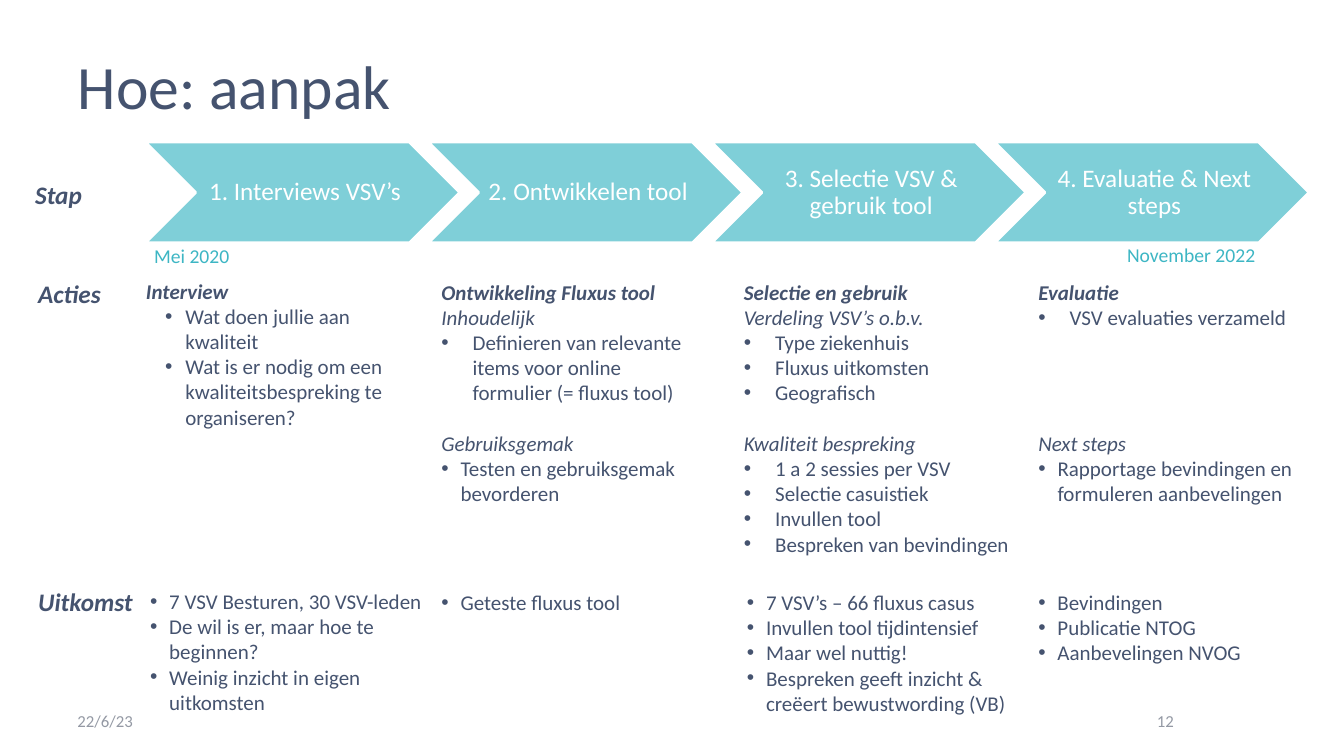
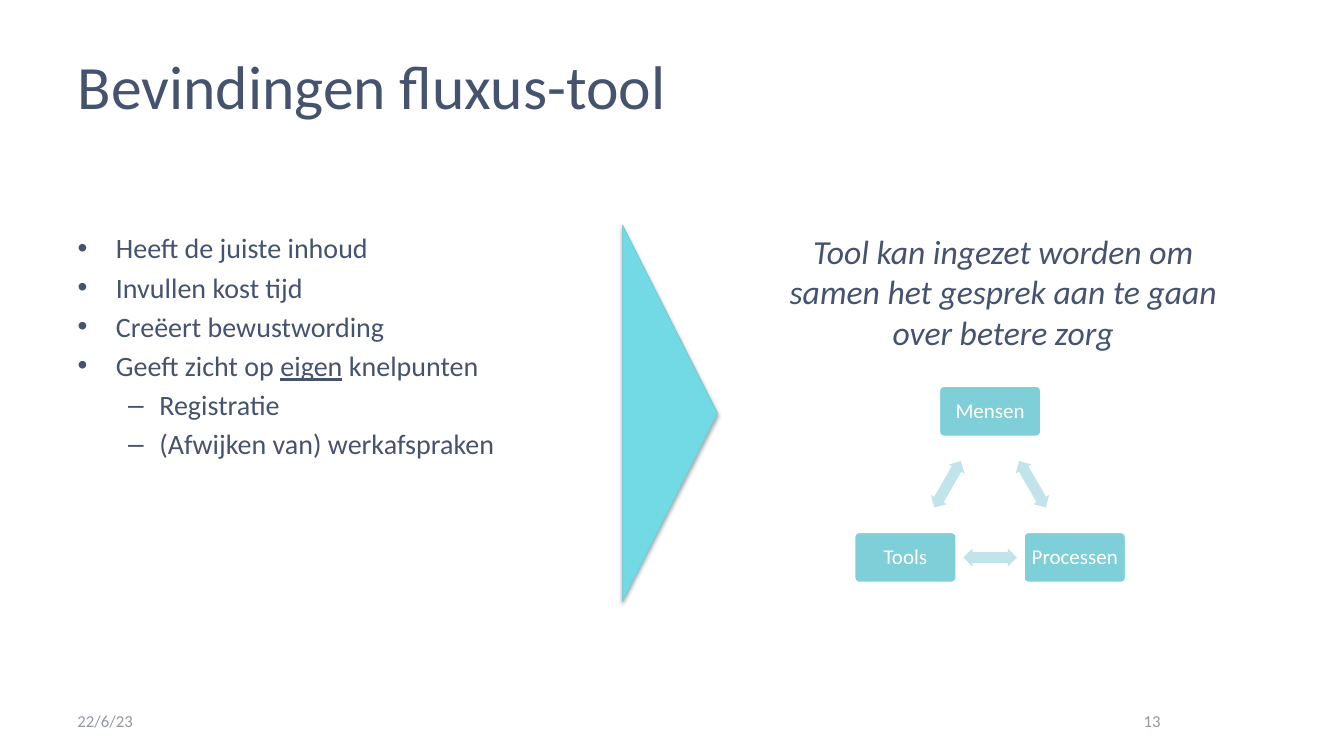
from dataclasses import dataclass
from typing import Optional, Sequence

from lxml import etree
from pptx import Presentation
from pptx import util as u
from pptx.dml import color
from pptx.enum import shapes, text
from pptx.oxml import ns

FONT = "Calibri"
NAVY = "45536F"
GREY = "9499A4"
TEAL = "7FCFD8"
PALE_TEAL = "C0E4E9"
BRIGHT_TEAL = "72DAE5"
EDGE_TEAL = "7ACCD5"
DATE_TEAL = "3DB6C4"
WHITE = "FFFFFF"
LINE_PT = 18


@dataclass(frozen=True)
class Bullet:
    margin: float
    hanging: float
    char: str = "•"
    level: int = 0


@dataclass(frozen=True)
class Run:
    words: str
    bold: bool = False
    italic: bool = False
    underline: bool = False


@dataclass(frozen=True)
class Line:
    runs: tuple[Run, ...]
    bullet: Optional[Bullet] = None
    before: float = 0


@dataclass(frozen=True)
class Block:
    left: float
    top: float
    width: float
    height: float
    lines: tuple[Line, ...]
    size: float = 15
    ink: str = NAVY
    align: text.PP_ALIGN = text.PP_ALIGN.LEFT
    anchor: text.MSO_ANCHOR = text.MSO_ANCHOR.TOP


@dataclass(frozen=True)
class Node:
    label: str
    x: float
    y: float


WIDE = Bullet(0.31, 0.31)
NARROW = Bullet(0.19, 0.19)
NESTED = Bullet(0.39, 0.2, level=1)
FINDING = Bullet(0.38, 0.38)
DETAIL = Bullet(0.81, 0.31, "–", 1)


def plain(words: str) -> Line:
    return Line((Run(words),))


def heading(words: str) -> Line:
    return Line((Run(words, bold=True, italic=True),))


def subheading(words: str, skipped: int = 0) -> Line:
    return Line((Run(words, italic=True),), before=skipped * LINE_PT)


def bullets(style: Bullet, *items: str, before: float = 0) -> tuple[Line, ...]:
    return tuple(Line((Run(item),), style, before) for item in items)


def rgb(value: str) -> color.RGBColor:
    return color.RGBColor.from_string(value)


def add_bullet(paragraph, bullet: Bullet) -> None:
    paragraph.level = bullet.level
    props = paragraph._p.get_or_add_pPr()
    props.set("marL", str(u.Inches(bullet.margin)))
    props.set("indent", str(-u.Inches(bullet.hanging)))
    etree.SubElement(props, ns.qn("a:buFont")).set("typeface", "Arial")
    etree.SubElement(props, ns.qn("a:buChar")).set("char", bullet.char)


def write(frame, lines: Sequence[Line], size: float, ink: str,
          align: text.PP_ALIGN = text.PP_ALIGN.LEFT,
          spacing: Optional[float] = None) -> None:
    frame.word_wrap = True
    for index, line in enumerate(lines):
        paragraph = frame.paragraphs[0] if index == 0 else frame.add_paragraph()
        if line.bullet:
            add_bullet(paragraph, line.bullet)
        paragraph.alignment = align
        paragraph.space_before = u.Pt(line.before if index else 0)
        if spacing:
            paragraph.line_spacing = spacing
        for part in line.runs:
            run = paragraph.add_run()
            run.text = part.words
            run.font.name = FONT
            run.font.size = u.Pt(size)
            run.font.color.rgb = rgb(ink)
            run.font.bold = part.bold
            run.font.italic = part.italic
            run.font.underline = part.underline


def place(shape, left: float, top: float, width: float, height: float) -> None:
    shape.left, shape.top = u.Inches(left), u.Inches(top)
    shape.width, shape.height = u.Inches(width), u.Inches(height)


def add_block(slide, block: Block) -> None:
    box = slide.shapes.add_textbox(u.Inches(block.left), u.Inches(block.top),
                                   u.Inches(block.width), u.Inches(block.height))
    box.text_frame.vertical_anchor = block.anchor
    write(box.text_frame, block.lines, block.size, block.ink, block.align)


def add_figure(slide, preset: shapes.MSO_SHAPE, left: float, top: float,
               width: float, height: float, fill: str,
               edge: Optional[str] = None, edge_pt: float = 2,
               turn: float = 0):
    figure = slide.shapes.add_shape(preset, u.Inches(left), u.Inches(top),
                                    u.Inches(width), u.Inches(height))
    figure.shadow.inherit = False
    figure.rotation = turn
    figure.fill.solid()
    figure.fill.fore_color.rgb = rgb(fill)
    if edge:
        figure.line.color.rgb = rgb(edge)
        figure.line.width = u.Pt(edge_pt)
    else:
        figure.line.fill.background()
    return figure


def add_label(figure, words: str, size: float, left: float, other: float) -> None:
    frame = figure.text_frame
    frame.margin_left = u.Inches(left)
    frame.margin_right = frame.margin_top = frame.margin_bottom = u.Inches(other)
    frame.vertical_anchor = text.MSO_ANCHOR.MIDDLE
    write(frame, [plain(words)], size, WHITE, text.PP_ALIGN.CENTER, 0.9)


def add_soft_shadow(figure) -> None:
    effects = figure._element.spPr.find(ns.qn("a:effectLst"))
    shadow = etree.SubElement(effects, ns.qn("a:outerShdw"), blurRad=str(u.Pt(3.1)),
                              dist=str(u.Pt(1.8)), dir="5400000", rotWithShape="0")
    tint = etree.SubElement(shadow, ns.qn("a:srgbClr"), val="000000")
    etree.SubElement(tint, ns.qn("a:alpha"), val="35000")


def start_slide(prs, layout: int, title: str, number: str, number_left: float):
    slide = prs.slides.add_slide(prs.slide_layouts[layout])
    place(slide.shapes.title, 0.67, 0.43, 12, 1.12)
    frame = slide.shapes.title.text_frame
    frame.auto_size = text.MSO_AUTO_SIZE.NONE
    frame.vertical_anchor = text.MSO_ANCHOR.TOP
    write(frame, [plain(title)], 44, NAVY)
    middle = text.MSO_ANCHOR.MIDDLE
    add_block(slide, Block(0.67, 6.95, 3.11, 0.4, (plain("22/6/23"),), 12, GREY,
                           anchor=middle))
    add_block(slide, Block(number_left, 6.95, 2.05, 0.4, (plain(number),), 12, GREY,
                           text.PP_ALIGN.RIGHT, middle))
    return slide


STEPS = ("1. Interviews VSV’s", "2. Ontwikkelen tool",
         "3. Selectie VSV & gebruik tool", "4. Evaluatie & Next steps")

APPROACH = (
    Block(0.25, 1.73, 0.8, 0.41, (heading("Stap"),), 18),
    Block(0.28, 2.71, 1.56, 0.4, (heading("Acties"),), 18),
    Block(0.28, 5.77, 1.56, 0.4, (heading("Uitkomst"),), 18),
    Block(1.43, 2.37, 2.66, 0.34, (plain("Mei 2020"),), 14, DATE_TEAL),
    Block(11.08, 2.36, 2.1, 0.34, (plain("November 2022"),), 14, DATE_TEAL),
    Block(1.35, 2.71, 2.64, 1.62, (
        heading("Interview"),
        *bullets(NESTED, "Wat doen jullie aan kwaliteit",
                 "Wat is er nodig om een kwaliteitsbespreking te organiseren?"))),
    Block(4.28, 2.72, 2.64, 2.37, (
        heading("Ontwikkeling Fluxus tool"),
        subheading("Inhoudelijk"),
        *bullets(WIDE, "Definieren van relevante items voor online formulier (= fluxus tool)"),
        subheading("Gebruiksgemak", 1),
        *bullets(NARROW, "Testen en gebruiksgemak bevorderen"))),
    Block(7.28, 2.72, 2.87, 2.88, (
        heading("Selectie en gebruik"),
        subheading("Verdeling VSV’s o.b.v."),
        *bullets(WIDE, "Type ziekenhuis", "Fluxus uitkomsten", "Geografisch"),
        subheading("Kwaliteit bespreking", 1),
        *bullets(WIDE, "1 a 2 sessies per VSV", "Selectie casuistiek",
                 "Invullen tool", "Bespreken van bevindingen"))),
    Block(10.2, 2.72, 2.91, 2.63, (
        heading("Evaluatie"),
        *bullets(WIDE, "VSV evaluaties verzameld"),
        subheading("Next steps", 4),
        *bullets(NARROW, "Rapportage bevindingen en formuleren aanbevelingen"))),
    Block(1.39, 5.79, 2.93, 1.36, bullets(
        NARROW, "7 VSV Besturen, 30 VSV-leden", "De wil is er, maar hoe te beginnen?",
        "Weinig inzicht in eigen uitkomsten")),
    Block(4.28, 5.8, 2.64, 0.61, bullets(NARROW, "Geteste fluxus tool")),
    Block(7.31, 5.8, 2.83, 1.36, bullets(
        NARROW, "7 VSV’s – 66 fluxus casus", "Invullen tool tijdintensief",
        "Maar wel nuttig!", "Bespreken geeft inzicht & creëert bewustwording (VB)")),
    Block(10.2, 5.8, 2.64, 0.86, bullets(
        NARROW, "Bevindingen", "Publicatie NTOG", "Aanbevelingen NVOG")),
)

FINDINGS = (
    *bullets(FINDING, "Heeft de juiste inhoud", "Invullen kost tijd",
             "Creëert bewustwording", before=4),
    Line((Run("Geeft zicht op "), Run("eigen", underline=True), Run(" knelpunten")),
         FINDING, 4),
    *bullets(DETAIL, "Registratie", "(Afwijken van) werkafspraken", before=4),
)

CONCLUSION = Block(
    7.51, 2.24, 4.88, 1.31,
    (subheading("Tool kan ingezet worden om samen het gesprek aan te gaan over betere zorg"),),
    24, align=text.PP_ALIGN.CENTER)

CYCLE = (Node("Mensen", 9.82, 4.08), Node("Processen", 10.66, 5.53),
         Node("Tools", 8.98, 5.53))


def build_approach(prs) -> None:
    slide = start_slide(prs, 5, "Hoe: aanpak", "12", 9.69)
    step_width = 3.12
    for index, step in enumerate(STEPS):
        chevron = add_figure(slide, shapes.MSO_SHAPE.CHEVRON,
                             1.44 + index * step_width * 0.9, 1.41, step_width, 1,
                             TEAL, WHITE)
        add_label(chevron, step, 18, 0.08, 0.03)
    for block in APPROACH:
        add_block(slide, block)


def build_findings(prs) -> None:
    slide = start_slide(prs, 1, "Bevindingen fluxus-tool", "13", 9.56)
    body = slide.placeholders[1]
    place(body, 0.67, 2.24, 4.62, 3.73)
    body.text_frame.auto_size = text.MSO_AUTO_SIZE.NONE
    write(body.text_frame, FINDINGS, 20, NAVY)

    pointer = add_figure(slide, shapes.MSO_SHAPE.ISOSCELES_TRIANGLE, 4.78, 3.63,
                         3.73, 0.94, BRIGHT_TEAL, EDGE_TEAL, 0.75, 90)
    add_soft_shadow(pointer)
    add_block(slide, CONCLUSION)

    node_w, node_h, link_w, link_h = 1.02, 0.51, 0.53, 0.18
    for index, node in enumerate(CYCLE):
        card = add_figure(slide, shapes.MSO_SHAPE.ROUNDED_RECTANGLE,
                          node.x - node_w / 2, node.y - node_h / 2, node_w, node_h,
                          TEAL, WHITE)
        card.adjustments[0] = 0.1
        add_label(card, node.label, 15, 0.03, 0.03)
        following = CYCLE[(index + 1) % len(CYCLE)]
        link = add_figure(slide, shapes.MSO_SHAPE.LEFT_RIGHT_ARROW,
                          (node.x + following.x - link_w) / 2,
                          (node.y + following.y - link_h) / 2,
                          link_w, link_h, PALE_TEAL, turn=60 + 120 * index)
        link.adjustments[0] = 0.6
        link.adjustments[1] = 0.5


def main() -> None:
    prs = Presentation()
    prs.slide_width, prs.slide_height = u.Inches(13.33), u.Inches(7.5)
    build_approach(prs)
    build_findings(prs)
    prs.save("out.pptx")


if __name__ == "__main__":
    main()
